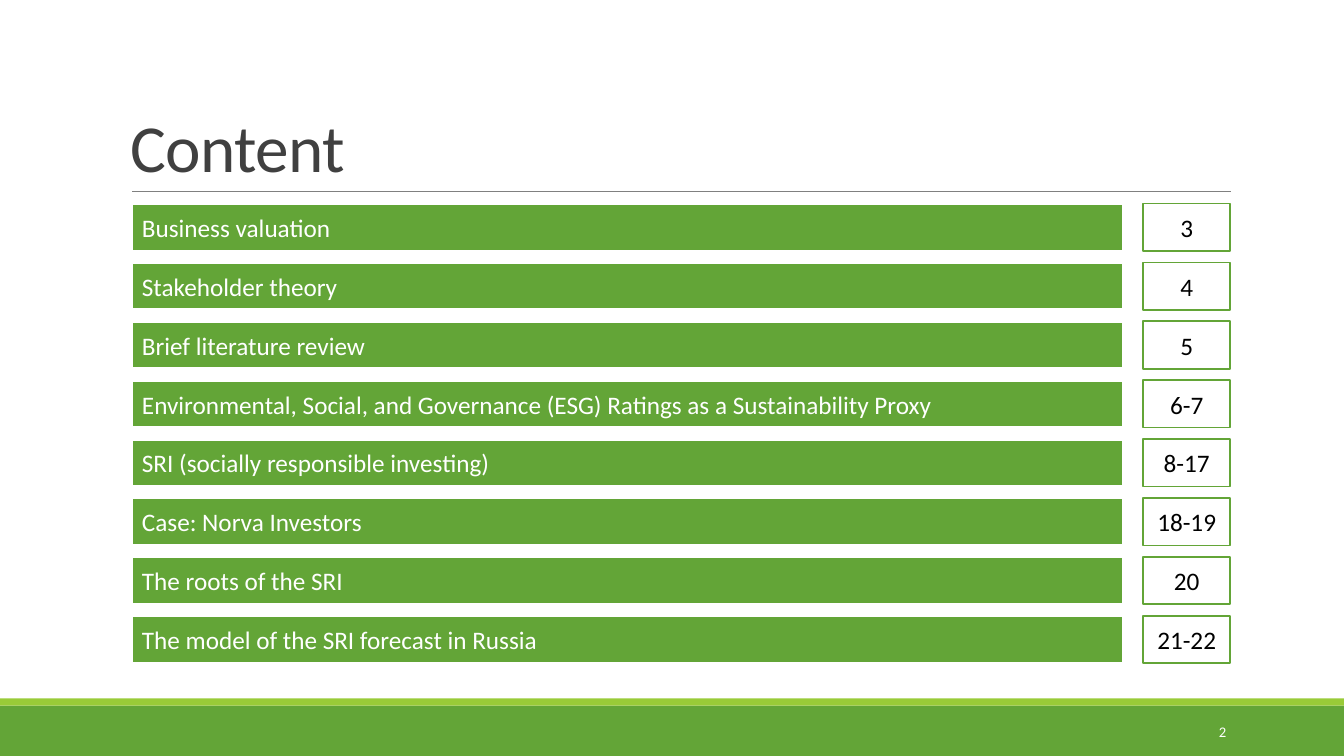
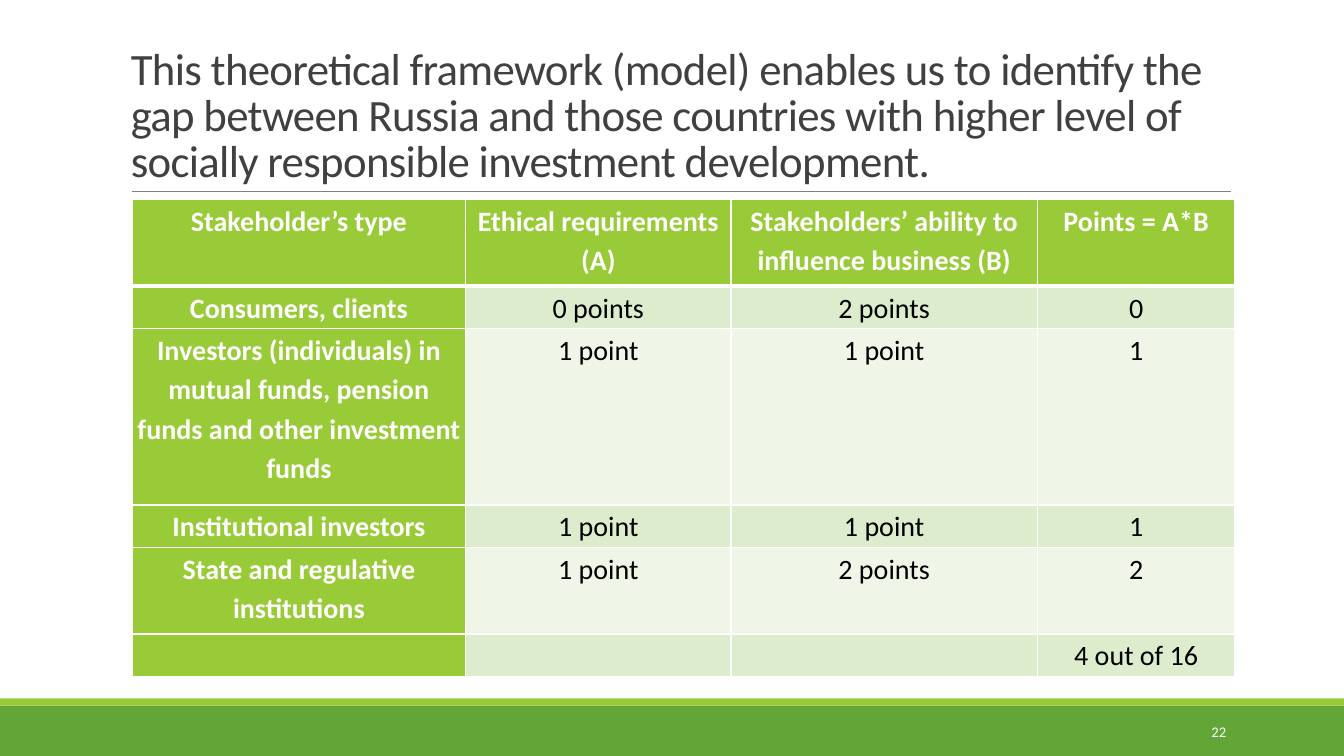
import pptx
import pptx.util
import pptx.dml.color
import pptx.enum.shapes
import pptx.enum.text
import pptx.oxml
import pptx.oxml.ns
from lxml import etree

Inches = pptx.util.Inches
Pt = pptx.util.Pt
RGBColor = pptx.dml.color.RGBColor
ALIGN = pptx.enum.text.PP_ALIGN
ANCHOR = pptx.enum.text.MSO_ANCHOR
qn = pptx.oxml.ns.qn

FONT = "Calibri"
GREEN = RGBColor(0x63, 0xA5, 0x37)
LIME = RGBColor(0x99, 0xCB, 0x38)
PALE = RGBColor(0xDE, 0xEC, 0xCE)
PALER = RGBColor(0xEF, 0xF6, 0xE8)
GREY = RGBColor(0x80, 0x80, 0x80)
DARK = RGBColor(0x40, 0x40, 0x40)
WHITE = RGBColor(0xFF, 0xFF, 0xFF)
BLACK = RGBColor(0, 0, 0)

SLIDE_W, SLIDE_H = 13.33, 7.5
LEFT = 1.31
TITLE_BOX = (1.2, 0.31, 11, 1.59)
NUMBER_BOX = (10.83, 7.06, 1.43, 0.4)
CONTENT_BOX = (LEFT, 2.02, 10.89, 4.56)
TABLE_BOX = (LEFT, 1.98, 10.94, 4.74)

CONTENTS = [
    ("Business valuation", "3"),
    ("Stakeholder theory", "4"),
    ("Brief literature review", "5"),
    ("Environmental, Social, and Governance (ESG) Ratings as a Sustainability Proxy", "6-7"),
    ("SRI (socially responsible investing)", "8-17"),
    ("Case: Norva Investors", "18-19"),
    ("The roots of the SRI", "20"),
    ("The model of the SRI forecast in Russia", "21-22"),
]

MODEL_TITLE = (
    "This theoretical framework (model) enables us to identify the gap between "
    "Russia and those countries with higher level of socially responsible "
    "investment development."
)
MODEL_COLS = [3.31, 2.63, 3.04, 1.96]
MODEL_ROWS = [
    (0.86, ["Stakeholder’s type", "Ethical requirements (A)",
            "Stakeholders’ ability to influence business (B)", "Points = A*B"]),
    (0.42, ["Consumers, clients", "0 points", "2 points", "0"]),
    (1.75, ["Investors (individuals) in mutual funds, pension funds and other investment funds",
            "1 point", "1 point", "1"]),
    (0.42, ["Institutional investors", "1 point", "1 point", "1"]),
    (0.86, ["State and regulative institutions", "1 point", "2 points", "2"]),
    (0.42, ["", "", "", "4 out of 16"]),
]


def inches(box):
    return [Inches(v) for v in box]


def write(tf, text, size, color, align=ALIGN.LEFT, bold=False, spacing=None):
    p = tf.paragraphs[0]
    p.alignment = align
    if spacing:
        p.line_spacing = spacing
    r = p.add_run()
    r.text = text
    r.font.name = FONT
    r.font.size = Pt(size)
    r.font.bold = bold
    r.font.color.rgb = color
    return r


def add_rect(slide, box, fill, line=None, line_width=1):
    sp = slide.shapes.add_shape(pptx.enum.shapes.MSO_SHAPE.RECTANGLE, *inches(box))
    sp.shadow.inherit = False
    sp.fill.solid()
    sp.fill.fore_color.rgb = fill
    if line is None:
        sp.line.fill.background()
    else:
        sp.line.color.rgb = line
        sp.line.width = Pt(line_width)
    return sp


def add_label(slide, box, text, fill, line, line_width, color, align):
    sp = add_rect(slide, box, fill, line, line_width)
    tf = sp.text_frame
    tf.word_wrap = True
    tf.vertical_anchor = ANCHOR.MIDDLE
    write(tf, text, 18, color, align)


def add_text(slide, box, anchor, *args, **kwargs):
    tf = slide.shapes.add_textbox(*inches(box)).text_frame
    tf.word_wrap = True
    tf.vertical_anchor = anchor
    return write(tf, *args, **kwargs)


def add_frame(prs, title, title_size, number):
    slide = prs.slides.add_slide(prs.slide_layouts[6])
    add_rect(slide, (0, 7, SLIDE_W, 0.5), GREEN)
    add_rect(slide, (0, 6.93, SLIDE_W, 0.07), LIME)
    rule = slide.shapes.add_connector(
        pptx.enum.shapes.MSO_CONNECTOR.STRAIGHT, *inches((LEFT, 1.9, 12.21, 1.9)))
    rule.line.color.rgb = GREY
    rule.line.width = Pt(0.5)
    etree.SubElement(rule._element.spPr, qn("a:effectLst"))
    r = add_text(slide, TITLE_BOX, ANCHOR.BOTTOM, title, title_size, DARK, spacing=0.85)
    r.font._element.set("spc", "-50")
    add_text(slide, NUMBER_BOX, ANCHOR.MIDDLE, number, 10.5, WHITE, ALIGN.RIGHT)
    return slide


def add_contents(slide, box, items):
    left, top, width, height = box
    bar_h, page_w, gap = 0.47, 0.86, 0.2
    step = (height - bar_h) / (len(items) - 1)
    for i, (topic, pages) in enumerate(items):
        y = top + i * step
        add_label(slide, (left, y, width - page_w - gap, bar_h), topic,
                  GREEN, WHITE, 2, WHITE, ALIGN.LEFT)
        add_label(slide, (left + width - page_w, y, page_w, bar_h), pages,
                  WHITE, GREEN, 1.25, BLACK, ALIGN.CENTER)


def set_borders(cell, **widths):
    tcPr = cell._tc.get_or_add_tcPr()
    for side in "LRTB":
        ln = etree.SubElement(tcPr, qn("a:ln" + side), w=str(Pt(widths.get(side, 1))))
        fill = etree.SubElement(ln, qn("a:solidFill"))
        etree.SubElement(fill, qn("a:srgbClr"), val=str(WHITE))


def add_model_table(slide, box, cols, rows):
    table = slide.shapes.add_table(len(rows), len(cols), *inches(box)).table
    for col, width in zip(table.columns, cols):
        col.width = Inches(width)
    for i, (height, texts) in enumerate(rows):
        table.rows[i].height = Inches(height)
        for j, text in enumerate(texts):
            cell = table.cell(i, j)
            heading = i == 0 or j == 0
            cell.margin_left = cell.margin_right = Inches(0.02)
            cell.margin_top = cell.margin_bottom = 0
            set_borders(cell, T=3 if i == 1 else 1, B=3 if i == 0 else 1)
            cell.fill.solid()
            cell.fill.fore_color.rgb = LIME if heading else PALE if i % 2 else PALER
            if text:
                write(cell.text_frame, text, 20, WHITE if heading else BLACK,
                      ALIGN.CENTER, heading, 1.15)


def main():
    prs = pptx.Presentation()
    prs.slide_width = Inches(SLIDE_W)
    prs.slide_height = Inches(SLIDE_H)
    add_contents(add_frame(prs, "Content", 48, "2"), CONTENT_BOX, CONTENTS)
    add_model_table(add_frame(prs, MODEL_TITLE, 32, "22"), TABLE_BOX, MODEL_COLS, MODEL_ROWS)
    prs.save("out.pptx")


if __name__ == "__main__":
    main()
